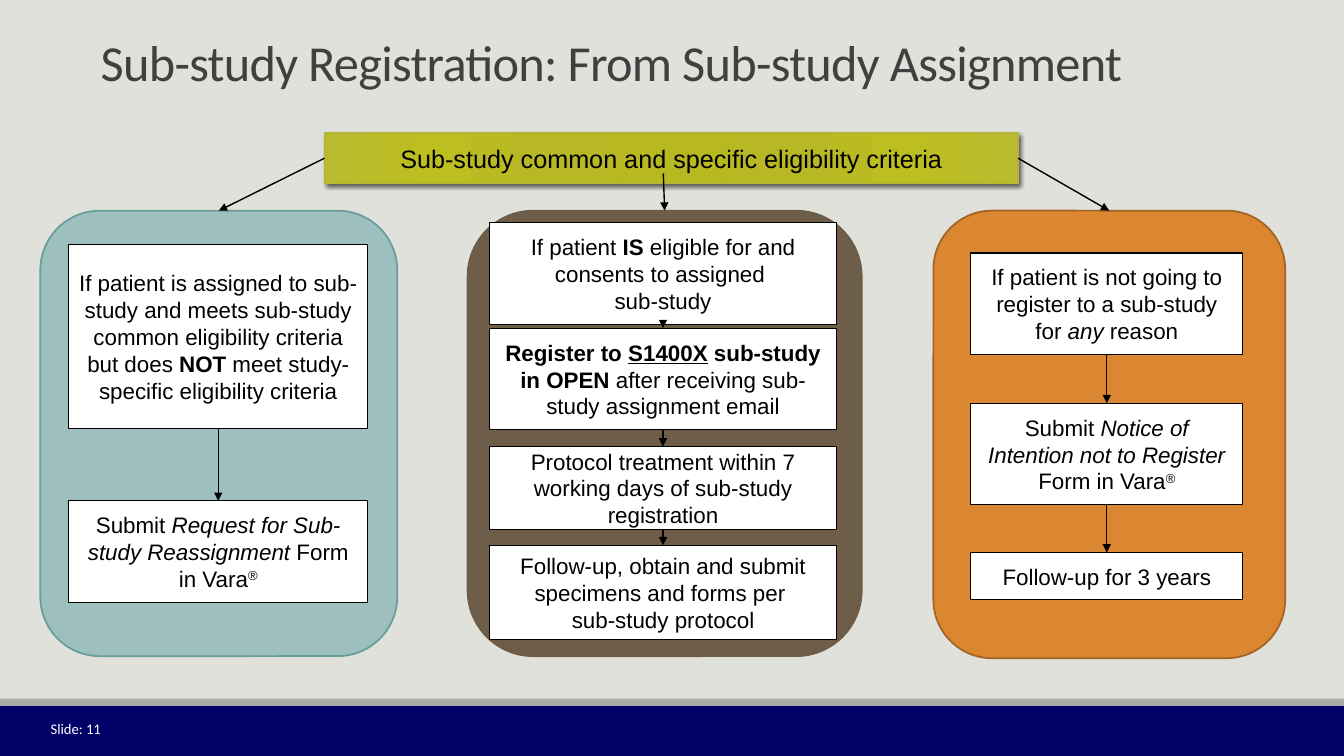
from itertools import pairwise

from lxml.etree import SubElement
from pptx import Presentation
from pptx.dml.color import RGBColor
from pptx.enum.shapes import MSO_CONNECTOR, MSO_SHAPE
from pptx.enum.text import MSO_ANCHOR, PP_ALIGN
from pptx.oxml import parse_xml
from pptx.oxml.ns import nsdecls, qn
from pptx.util import Pt

BACKDROP = RGBColor(0xE1, 0xE1, 0xDB)
NAVY = RGBColor(0x00, 0x00, 0x66)
GREY = RGBColor(0xAC, 0xAD, 0xA8)
CHARCOAL = RGBColor(0x40, 0x40, 0x40)
BLACK = RGBColor(0x00, 0x00, 0x00)
WHITE = RGBColor(0xFF, 0xFF, 0xFF)
OLIVE = RGBColor(0xB3, 0xB4, 0x35)
ORANGE = RGBColor(0xDB, 0x86, 0x31)
ORANGE_EDGE = RGBColor(0xA2, 0x63, 0x24)
TEAL = RGBColor(0x9D, 0xBF, 0xBE)
TEAL_EDGE = RGBColor(0x68, 0x9D, 0x9B)
BROWN = RGBColor(0x6E, 0x5D, 0x49)
BROWN_EDGE = RGBColor(0x6C, 0x5C, 0x48)
BANNER_STOPS = ((0, RGBColor(0xB8, 0xB9, 0x20)), (34, RGBColor(0xB7, 0xB8, 0x23)),
                (70, RGBColor(0xBD, 0xBE, 0x20)), (100, RGBColor(0xB9, 0xBA, 0x2F)))

BOLD, ITALIC, UNDERLINE = {"bold": True}, {"italic": True}, {"underline": True}
RAISED = {"baseline": "30000"}
BREAK = ("\n", {})
BODY = {"name": "Arial", "size": Pt(16), "color": BLACK}
BANNER = BODY | {"size": Pt(18)}
TITLE = {"name": "Calibri", "size": Pt(36), "color": CHARCOAL, "spc": "-50"}
FOOTER = {"name": "Calibri", "size": Pt(10.5), "color": WHITE}

PANELS = (
    {"area": (666.7, 150.5, 251.3, 319.7), "fill": ORANGE, "edge": ORANGE_EDGE,
     "left": 693.4, "width": 194.4, "arrow": 1, "steps": (
         (180.7, 72.7, [[("If patient is not going to register to a sub-study for ", {}),
                         ("any", ITALIC), (" reason", {})]]),
         (288, 72.7, [[("Submit ", {}), ("Notice of Intention not to Register", ITALIC),
                       (" Form in Vara", {}), ("®", RAISED)]]),
         (394.6, 33.8, [[("Follow-up for 3 years", {})]]))},
    {"area": (28.8, 150.5, 255, 318.2), "fill": TEAL, "edge": TEAL_EDGE,
     "left": 49, "width": 213.8, "arrow": 1, "steps": (
         (174.8, 131, [[("If patient is assigned to sub-study and meets sub-study common "
                         "eligibility criteria but does ", {}), ("NOT", BOLD),
                        (" meet study-specific eligibility criteria", {})]]),
         (357.8, 72.7, [[("Submit ", {}), ("Request for Sub-study Reassignment", ITALIC),
                         (" Form in Vara", {}), ("®", RAISED)]]))},
    {"area": (334, 150.5, 281.5, 318.2), "fill": BROWN, "edge": BROWN_EDGE,
     "left": 349.4, "width": 248.4, "arrow": 0.75, "steps": (
         (159.1, 72.7, [[("If patient ", {}), ("IS", BOLD),
                         (" eligible for and consents to assigned ", {}), BREAK,
                         ("sub-study", {})]]),
         (234.4, 72.7, [[("Register to ", BOLD), ("S1400X", BOLD | UNDERLINE),
                         (" sub-study in OPEN ", BOLD),
                         ("after receiving sub-study assignment email", {})]]),
         (319, 59.2, [[("Protocol treatment within 7 working days of sub-study "
                        "registration", {})]]),
         (389.5, 67, [[("Follow-up, obtain and submit specimens and forms per ", {})],
                      [("sub-study protocol", {})]]))},
)


def add_span(para, text, style):
    """Add one formatted run, or a line break."""
    if (text, {}) == BREAK:
        para.add_line_break()
        return
    span = para.add_run()
    span.text = text
    for name, value in style.items():
        if name == "color":
            span.font.color.rgb = value
        elif name in ("baseline", "spc"):
            span.font._element.set(name, value)
        else:
            setattr(span.font, name, value)


def write(box, paragraphs, style, align, anchor=MSO_ANCHOR.MIDDLE, **insets):
    """Fill a box with paragraphs of (text, format) spans."""
    frame = box.text_frame
    for name, value in ({"word_wrap": True, "vertical_anchor": anchor} | insets).items():
        setattr(frame, name, value)
    for index, spans in enumerate(paragraphs):
        para = frame.add_paragraph() if index else frame.paragraphs[0]
        para.alignment = align
        for text, extra in spans:
            add_span(para, text, style | extra)


def add_block(shapes, kind, area, fill, edge=None, weight=0.75):
    """Add a filled preset shape with an optional outline."""
    block = shapes.add_shape(kind, *map(Pt, area))
    block.shadow.inherit = False
    block.fill.solid()
    block.fill.fore_color.rgb = fill
    if edge is None:
        block.line.fill.background()
    else:
        block.line.color.rgb = edge
        block.line.width = Pt(weight)
    return block


def add_label(page, area, text, style, align, anchor):
    """Add a text box holding a single line and return its paragraph."""
    box = page.shapes.add_textbox(*map(Pt, area))
    write(box, [[(text, {})]], style, align, anchor)
    return box.text_frame.paragraphs[0]


def add_arrow(shapes, target, weight, source=None, side=2, start=(0, 0)):
    """Draw an arrow to the top of the target from a source side or a point."""
    arrow = shapes.add_connector(MSO_CONNECTOR.STRAIGHT, *map(Pt, start + start))
    if source is not None:
        arrow.begin_connect(source, side)
    arrow.end_connect(target, 0)
    arrow.line.color.rgb = BLACK
    arrow.line.width = Pt(weight)
    SubElement(arrow.line._get_or_add_ln(), qn("a:tailEnd"), type="triangle")
    SubElement(arrow._element.spPr, qn("a:effectLst"))


def add_banner(page):
    """Add the shaded criteria banner with its gradient and shadow."""
    banner = add_block(page.shapes, MSO_SHAPE.RECTANGLE, (231.8, 95, 495.4, 36),
                       OLIVE, OLIVE, 1)
    stops = "".join(f'<a:gs pos="{place * 1000}"><a:srgbClr val="{color}"/></a:gs>'
                    for place, color in BANNER_STOPS)
    gradient = parse_xml(
        f'<a:gradFill {nsdecls("a")} rotWithShape="1"><a:gsLst>{stops}</a:gsLst>'
        '<a:path path="circle"><a:fillToRect l="100000" t="100000" r="100000" b="100000"/>'
        '</a:path></a:gradFill>')
    properties = banner._element.spPr
    properties.replace(properties.find(qn("a:solidFill")), gradient)
    shadow = SubElement(properties.find(qn("a:effectLst")), qn("a:outerShdw"),
                        blurRad=str(Pt(3)), dist=str(Pt(2)), dir="2700000", rotWithShape="0")
    color = SubElement(shadow, qn("a:srgbClr"), val=str(BLACK))
    SubElement(color, qn("a:alpha"), val="60000")
    write(banner, [[("Sub-study common and specific eligibility criteria", {})]],
          BANNER, PP_ALIGN.CENTER)
    return banner


def add_panel(page, panel):
    """Add a grouped rounded panel with its chain of steps."""
    shapes = page.shapes.add_group_shape().shapes
    frame = add_block(shapes, MSO_SHAPE.ROUNDED_RECTANGLE, panel["area"],
                      panel["fill"], panel["edge"], 1.25)
    boxes = []
    for top, height, paragraphs in panel["steps"]:
        box = add_block(shapes, MSO_SHAPE.RECTANGLE,
                        (panel["left"], top, panel["width"], height), WHITE, BLACK)
        write(box, paragraphs, BODY, PP_ALIGN.CENTER,
              margin_top=Pt(7.2), margin_bottom=Pt(7.2))
        boxes.append(box)
    for source, target in pairwise(boxes):
        add_arrow(shapes, target, panel["arrow"], source)
    return frame


def main():
    """Build the sub-study registration slide."""
    deck = Presentation()
    deck.slide_width, deck.slide_height = Pt(960), Pt(540)
    page = deck.slides.add_slide(deck.slide_layouts[6])
    page.background.fill.solid()
    page.background.fill.fore_color.rgb = BACKDROP
    add_block(page.shapes, MSO_SHAPE.RECTANGLE, (0, 504, 960, 36), NAVY)
    add_block(page.shapes, MSO_SHAPE.RECTANGLE, (0, 499, 960, 5), GREY)
    add_label(page, (5, 506.2, 74.2, 28.8), "Slide: 11", FOOTER,
              PP_ALIGN.RIGHT, MSO_ANCHOR.MIDDLE)
    title = add_label(page, (64.8, 10, 895, 59), "Sub-study Registration: From Sub-study Assignment",
                      TITLE, PP_ALIGN.LEFT, MSO_ANCHOR.BOTTOM)
    title.line_spacing = 0.85
    banner = add_banner(page)
    right, left, middle = [add_panel(page, panel) for panel in PANELS]
    add_arrow(page.shapes, right, 1, banner, 3)
    add_arrow(page.shapes, middle, 1, start=(473.8, 123.8))
    add_arrow(page.shapes, left, 1, banner, 1)
    deck.save("out.pptx")


if __name__ == "__main__":
    main()
